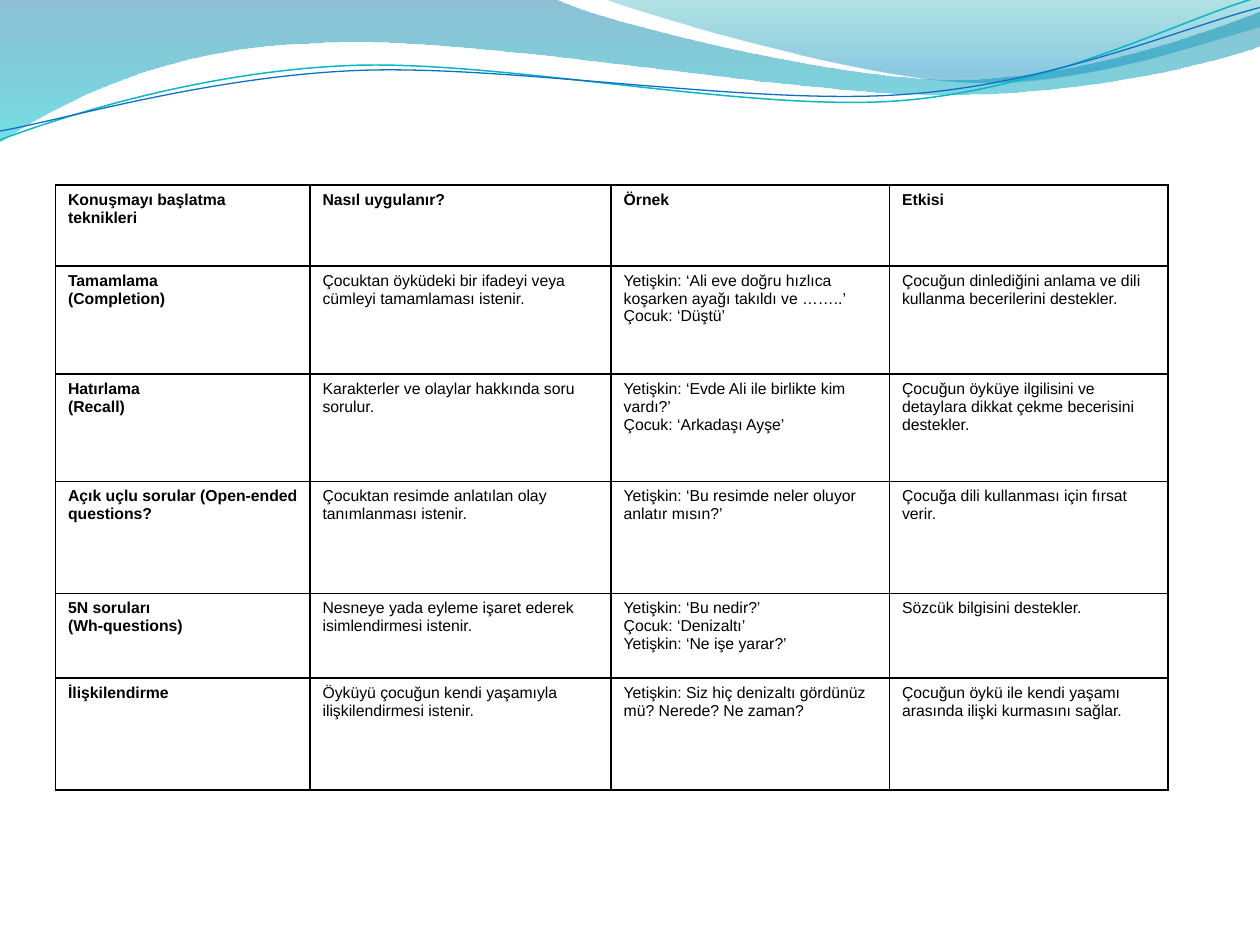
import math
from lxml import etree
from pptx import Presentation
from pptx.dml.color import RGBColor
from pptx.oxml.ns import qn
from pptx.util import Inches, Pt


def color(value):
    return RGBColor.from_string(value)


def add_curve(page, start, segments, close):
    points = [start]
    for segment in segments:
        points += zip(segment[::2], segment[1::2])
    points = [(Inches(x), Inches(y)) for x, y in points]
    builder = page.shapes.build_freeform(*points[0])
    builder.add_line_segments(points[1:], close=close)
    shape = builder.convert_to_shape()
    shape.shadow.inherit = False
    steps = iter(list(shape._element.iter(qn("a:lnTo"))))
    for segment in segments:
        group = [next(steps) for _ in segment[::2]]
        if len(group) == 3:
            bezier = etree.Element(qn("a:cubicBezTo"))
            group[0].addprevious(bezier)
            for step in group:
                bezier.append(step[0])
                step.getparent().remove(step)
    return shape


deck = Presentation()
deck.slide_width = Inches(10)
deck.slide_height = Inches(7.5)
page = deck.slides.add_slide(deck.slide_layouts[6])

waves = [
    ((0, 0),
     [(4.4, -0.01), (4.76, 0.17, 6.64, 0.63, 7.58, 0.63),
      (8.53, 0.63, 9.58, 0.26, 10, 0.09), (10.01, 0.36),
      (9.83, 0.44, 8.7, 0.76, 7.46, 0.75), (6.22, 0.75, 3.82, 0.28, 2.57, 0.34),
      (1.29, 0.36, 0.46, 0.83, -0.01, 1.13), (0, 0)],
     [(0, "0074A1", 45), (1, "00C6CF", 55)]),
    ((4.79, -0.01),
     [(5.09, 0.11, 6.82, 0.62, 7.69, 0.65), (8.56, 0.69, 9.61, 0.32, 10, 0.21),
      (10, 0), (4.79, -0.01)],
     [(0, "00A1A9", 30), (0.8, "008BBF", 45)]),
]
for start, segments, stops in waves:
    wave = add_curve(page, start, segments, True)
    wave.line.fill.background()
    wave.fill.gradient()
    wave.fill.gradient_angle = 270
    for stop, (position, shade, opacity) in zip(wave.fill.gradient_stops, stops):
        stop.position = position
        stop.color.rgb = color(shade)
    for tint, (position, shade, opacity) in zip(wave._element.spPr.iter(qn("a:srgbClr")), stops):
        etree.SubElement(tint, qn("a:alpha"), val=str(opacity * 1000))

tilt = 2.7
sine, cosine = math.sin(math.radians(tilt)), math.cos(math.radians(tilt))
strands = [
    ((0, 1.11),
     [(0.48, 0.93, 1.58, 0.57, 2.77, 0.52), (3.95, 0.47, 5.93, 0.89, 7.13, 0.8),
      (8.33, 0.71, 9.38, 0.15, 9.98, -0.02)], (4.99, 0.58), "0AB8BF", 0.85),
    ((0, 1.04),
     [(0.47, 0.96, 1.64, 0.61, 2.83, 0.56), (4.03, 0.51, 5.97, 0.84, 7.17, 0.75),
      (8.36, 0.67, 9.41, 0.21, 10, 0.06)], (5, 0.59), "0F6FC6", 0.75),
]
for start, segments, (middle_x, middle_y), shade, width in strands:
    level = []
    for segment in [start] + segments:
        flat = []
        for x, y in zip(segment[::2], segment[1::2]):
            dx, dy = x - middle_x, y - middle_y
            flat += [middle_x + dx * cosine - dy * sine, middle_y + dx * sine + dy * cosine]
        level.append(tuple(flat))
    strand = add_curve(page, level[0], level[1:], False)
    strand.rotation = 360 - tilt
    strand.fill.background()
    strand.line.color.rgb = color(shade)
    strand.line.width = Pt(width)

rows = [
    ["Konuşmayı başlatma teknikleri", "Nasıl uygulanır?", "Örnek", "Etkisi"],
    ["Tamamlama\n(Completion)",
     "Çocuktan öyküdeki bir ifadeyi veya cümleyi tamamlaması istenir.",
     "Yetişkin: ‘Ali eve doğru hızlıca koşarken ayağı takıldı ve ……..’\nÇocuk: ‘Düştü’",
     "Çocuğun dinlediğini anlama ve dili kullanma becerilerini destekler."],
    ["Hatırlama\n(Recall)",
     "Karakterler ve olaylar hakkında soru sorulur.",
     "Yetişkin: ‘Evde Ali ile birlikte kim vardı?’\nÇocuk: ‘Arkadaşı Ayşe’",
     "Çocuğun öyküye ilgilisini ve detaylara dikkat çekme becerisini destekler."],
    ["Açık uçlu sorular (Open-ended questions?",
     "Çocuktan resimde anlatılan olay tanımlanması istenir.",
     "Yetişkin: ‘Bu resimde neler oluyor anlatır mısın?’",
     "Çocuğa dili kullanması için fırsat verir."],
    ["5N soruları\n(Wh-questions)",
     "Nesneye yada eyleme işaret ederek isimlendirmesi istenir.",
     "Yetişkin: ‘Bu nedir?’\nÇocuk: ‘Denizaltı’\nYetişkin: ‘Ne işe yarar?’",
     "Sözcük bilgisini destekler."],
    ["İlişkilendirme",
     "Öyküyü çocuğun kendi yaşamıyla ilişkilendirmesi istenir.",
     "Yetişkin: Siz hiç denizaltı gördünüz mü? Nerede? Ne zaman?",
     "Çocuğun öykü ile kendi yaşamı arasında ilişki kurmasını sağlar."],
]
widths = [2.02, 2.39, 2.21, 2.21]
heights = [0.64, 0.86, 0.85, 0.89, 0.67, 0.89]

table = page.shapes.add_table(len(rows), len(widths), Inches(0.44), Inches(1.47),
                              Inches(sum(widths)), Inches(sum(heights))).table
table.horz_banding = False
for column, width in zip(table.columns, widths):
    column.width = Inches(width)
for row, height in zip(table.rows, heights):
    row.height = Inches(height)

for i, texts in enumerate(rows):
    for j, words in enumerate(texts):
        cell = table.cell(i, j)
        cell.text_frame.text = words
        for para in cell.text_frame.paragraphs:
            for span in para.runs:
                span.font.name = "Arial"
                span.font.size = Pt(9)
                span.font.bold = i == 0 or j == 0
                span.font.color.rgb = color("000000")
        properties = cell._tc.get_or_add_tcPr()
        for side in ("lnL", "lnR", "lnT", "lnB"):
            border = etree.SubElement(properties, qn("a:" + side), w=str(Pt(1)))
            paint = etree.SubElement(border, qn("a:solidFill"))
            etree.SubElement(paint, qn("a:srgbClr"), val="000000")
        cell.fill.background()

deck.save("out.pptx")
